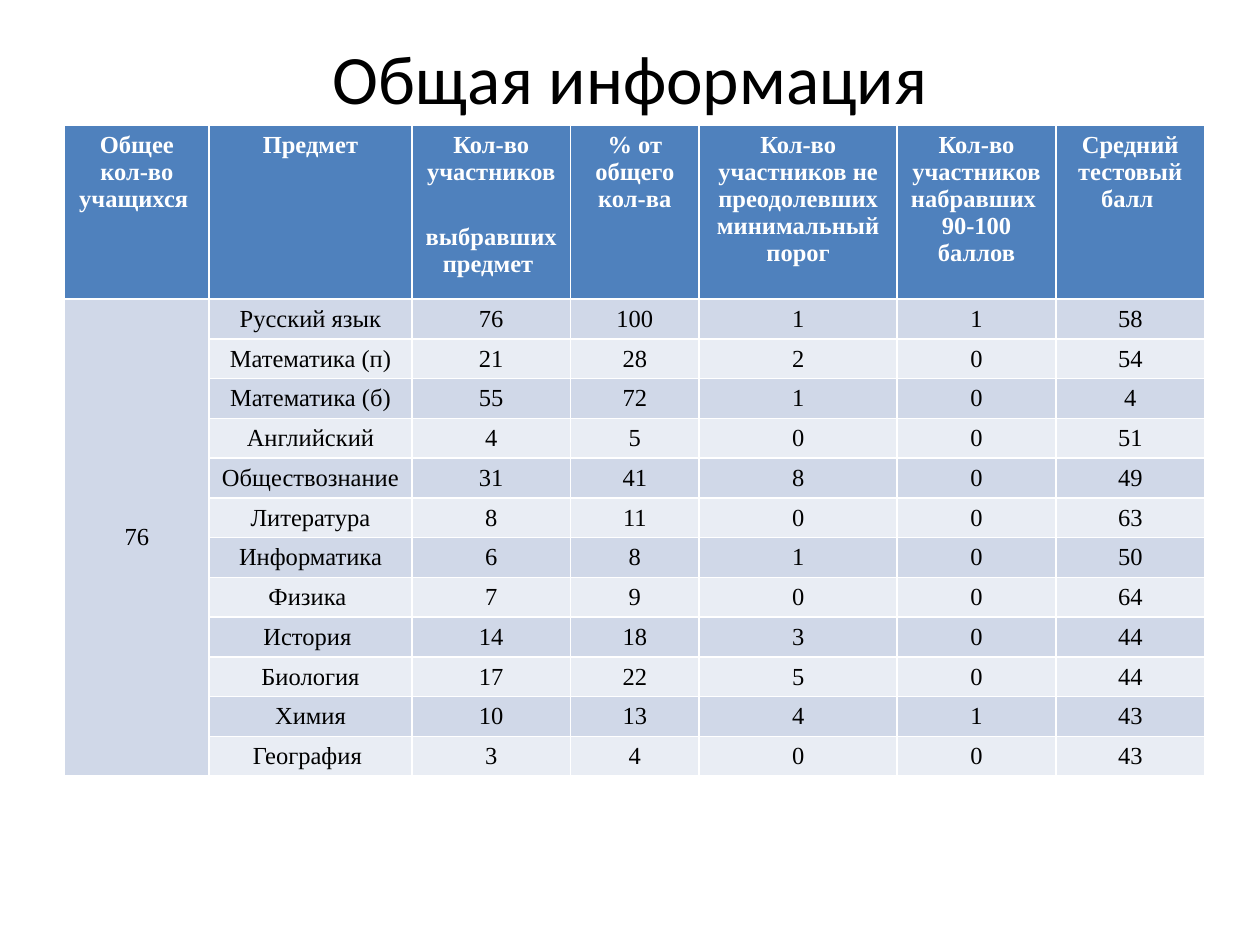
from pptx import Presentation
from pptx.dml.color import RGBColor as RGB
from pptx.enum.text import MSO_ANCHOR as Anchor, PP_ALIGN as Align
from pptx.util import Pt

WHITE = RGB(0xFF, 0xFF, 0xFF)
BLACK = RGB(0, 0, 0)
BLUE = RGB(0x4F, 0x81, 0xBD)
BANDS = [RGB(0xD0, 0xD8, 0xE8), RGB(0xE9, 0xED, 0xF4)]

HEADS = [
    "Общее кол-во учащихся ",
    "Предмет",
    "Кол-во участников\n\nвыбравших предмет ",
    "% от общего кол-ва",
    "Кол-во участников не преодолевших минимальный порог",
    "Кол-во участников набравших \n90-100 баллов",
    "Средний тестовый балл ",
]
MARKS = [
    ("Русский язык", 76, 100, 1, 1, 58),
    ("Математика (п)", 21, 28, 2, 0, 54),
    ("Математика (б)", 55, 72, 1, 0, 4),
    ("Английский", 4, 5, 0, 0, 51),
    ("Обществознание", 31, 41, 8, 0, 49),
    ("Литература", 8, 11, 0, 0, 63),
    ("Информатика", 6, 8, 1, 0, 50),
    ("Физика ", 7, 9, 0, 0, 64),
    ("История ", 14, 18, 3, 0, 44),
    ("Биология", 17, 22, 5, 0, 44),
    ("Химия", 10, 13, 4, 1, 43),
    ("География ", 3, 4, 0, 0, 43),
]
WIDTHS = [82.6, 115.9, 90.7, 73.5, 113.2, 90.7, 85]
HEAD_H = 99.5
ROW_H = 22.7


def write(frame, text, size, font, color, bold=False):
    par = frame.paragraphs[0]
    par.alignment = Align.CENTER
    for i, line in enumerate(text.split("\n")):
        if i:
            par.add_line_break()
        if line:
            run = par.add_run()
            run.text = line
            run.font.size = Pt(size)
            run.font.name = font
            run.font.bold = bold
            run.font.color.rgb = color


def put(cell, text, fill, color=BLACK, bold=False, anchor=Anchor.MIDDLE):
    cell.fill.solid()
    cell.fill.fore_color.rgb = fill
    cell.vertical_anchor = anchor
    write(cell.text_frame, text, 14, "Times New Roman", color, bold)


deck = Presentation()
deck.slide_width, deck.slide_height = Pt(720), Pt(540)
slide = deck.slides.add_slide(deck.slide_layouts[5])

title = slide.shapes.title
title.left, title.top, title.width, title.height = Pt(36), Pt(21.6), Pt(648), Pt(44)
title.text_frame.vertical_anchor = Anchor.MIDDLE
write(title.text_frame, "Общая информация", 39.6, "Calibri", BLACK)

high = HEAD_H + ROW_H * len(MARKS)
grid = slide.shapes.add_table(
    len(MARKS) + 1, len(HEADS), Pt(36.9), Pt(71.5), Pt(sum(WIDTHS)), Pt(high)
).table
for col, width in zip(grid.columns, WIDTHS):
    col.width = Pt(width)
for i, row in enumerate(grid.rows):
    row.height = Pt(ROW_H if i else HEAD_H)

for c, head in enumerate(HEADS):
    put(grid.cell(0, c), head, BLUE, WHITE, True, Anchor.TOP)

grid.cell(1, 0).merge(grid.cell(len(MARKS), 0))
put(grid.cell(1, 0), "76", BANDS[0])
for r, marks in enumerate(MARKS):
    for c, mark in enumerate(marks, 1):
        put(grid.cell(r + 1, c), str(mark), BANDS[r % 2])

deck.save("out.pptx")
